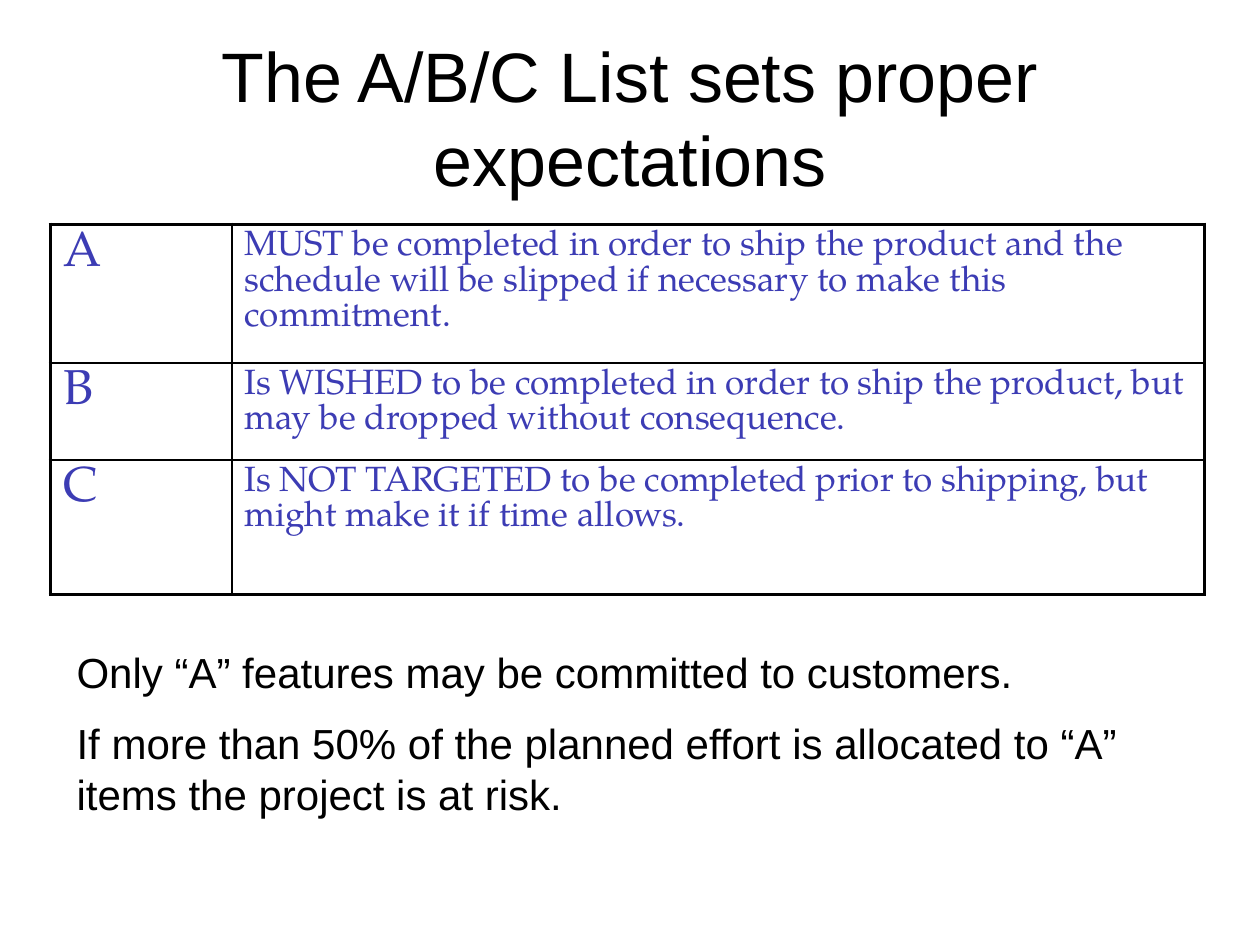
"""Build the A/B/C priority list slide with its table and closing notes."""
import pptx
import pptx.util
import pptx.dml.color
import pptx.enum.text
import pptx.oxml.ns
from lxml import etree

TITLE = "The A/B/C List sets proper expectations"
PRIORITIES = [
    ("A", "MUST be completed in order to ship the product and the schedule will be "
          "slipped if necessary to make this commitment."),
    ("B", "Is WISHED to be completed in order to ship the product, but may be dropped "
          "without consequence."),
    ("C", "Is NOT TARGETED to be completed prior to shipping, but might make it if "
          "time allows."),
]
NOTES = [
    "Only “A” features may be committed to customers.",
    "If more than 50% of the planned effort is allocated to “A” items the project is at risk.",
]
WIDTH, HEIGHT = 10, 7.5
TITLE_AREA = (0.5, 0.3, 9, 1.25)
NOTES_AREA = (0.51, 5.08, 9, 1.51)
TABLE_CORNER = (0.4, 1.78)
COLUMNS = (1.44, 7.72)
ROWS = (1.1, 0.77, 1.07)
BLACK, WHITE, BLUE = "000000", "FFFFFF", "3C3CB4"
SANS, SERIF = "Arial", "TeX Gyre Pagella"
CELL_SIZES = (28, 20)
OUTER, INNER = 2.25, 1


def color(value):
    """Turn a hex string into a colour."""
    return pptx.dml.color.RGBColor.from_string(value)


def inches(lengths):
    """Convert lengths in inches to slide units."""
    return [pptx.util.Inches(length) for length in lengths]


def add_child(parent, tag, **values):
    """Append a drawing element with the given attributes."""
    return etree.SubElement(parent, pptx.oxml.ns.qn(tag), values)


def write(para, text, size, font, ink, before=0):
    """Write one formatted span, with space before as a percentage."""
    span = para.add_run()
    span.text = text
    for name, value in {"size": pptx.util.Pt(size), "name": font}.items():
        setattr(span.font, name, value)
    span.font.color.rgb = color(ink)
    if before:
        space = add_child(para._p.get_or_add_pPr(), "a:spcBef")
        add_child(space, "a:spcPct", val=str(before * 1000))


def set_borders(cell, row, column):
    """Draw heavy lines at the table's rim and thin lines inside."""
    rim = {
        "a:lnL": column == 0,
        "a:lnR": column == len(COLUMNS) - 1,
        "a:lnT": row == 0,
        "a:lnB": row == len(ROWS) - 1,
    }
    properties = cell._tc.get_or_add_tcPr()
    for tag, outside in rim.items():
        width = pptx.util.Pt(OUTER if outside else INNER)
        line = add_child(properties, tag, w=str(int(width)))
        add_child(add_child(line, "a:solidFill"), "a:srgbClr", val=BLACK)


def add_title(page):
    """Place and format the title."""
    title = page.shapes.title
    title.left, title.top, title.width, title.height = inches(TITLE_AREA)
    frame = title.text_frame
    frame.word_wrap = True
    frame.vertical_anchor = pptx.enum.text.MSO_ANCHOR.MIDDLE
    para = frame.paragraphs[0]
    para.alignment = pptx.enum.text.PP_ALIGN.CENTER
    write(para, TITLE, 40, SANS, BLACK)


def add_priorities(page):
    """Add the table of priorities."""
    area = inches((*TABLE_CORNER, sum(COLUMNS), sum(ROWS)))
    table = page.shapes.add_table(len(ROWS), len(COLUMNS), *area).table
    table.first_row = table.horz_banding = False
    for column, width in zip(table.columns, inches(COLUMNS)):
        column.width = width
    for row, height in zip(table.rows, inches(ROWS)):
        row.height = height
    for row, texts in enumerate(PRIORITIES):
        for column, text in enumerate(texts):
            cell = table.cell(row, column)
            set_borders(cell, row, column)
            cell.fill.background()
            write(cell.text_frame.paragraphs[0], text, CELL_SIZES[column], SERIF, BLUE, 20)


def add_notes(page):
    """Add the closing notes below the table."""
    frame = page.shapes.add_textbox(*inches(NOTES_AREA)).text_frame
    frame.word_wrap = True
    for index, text in enumerate(NOTES):
        para = frame.add_paragraph() if index else frame.paragraphs[0]
        write(para, text, 24, SANS, BLACK, 50)


def main():
    """Build and save the deck."""
    deck = pptx.Presentation()
    deck.slide_width, deck.slide_height = inches((WIDTH, HEIGHT))
    page = deck.slides.add_slide(deck.slide_layouts[5])
    page.background.fill.solid()
    page.background.fill.fore_color.rgb = color(WHITE)
    add_title(page)
    add_priorities(page)
    add_notes(page)
    deck.save("out.pptx")


if __name__ == "__main__":
    main()
